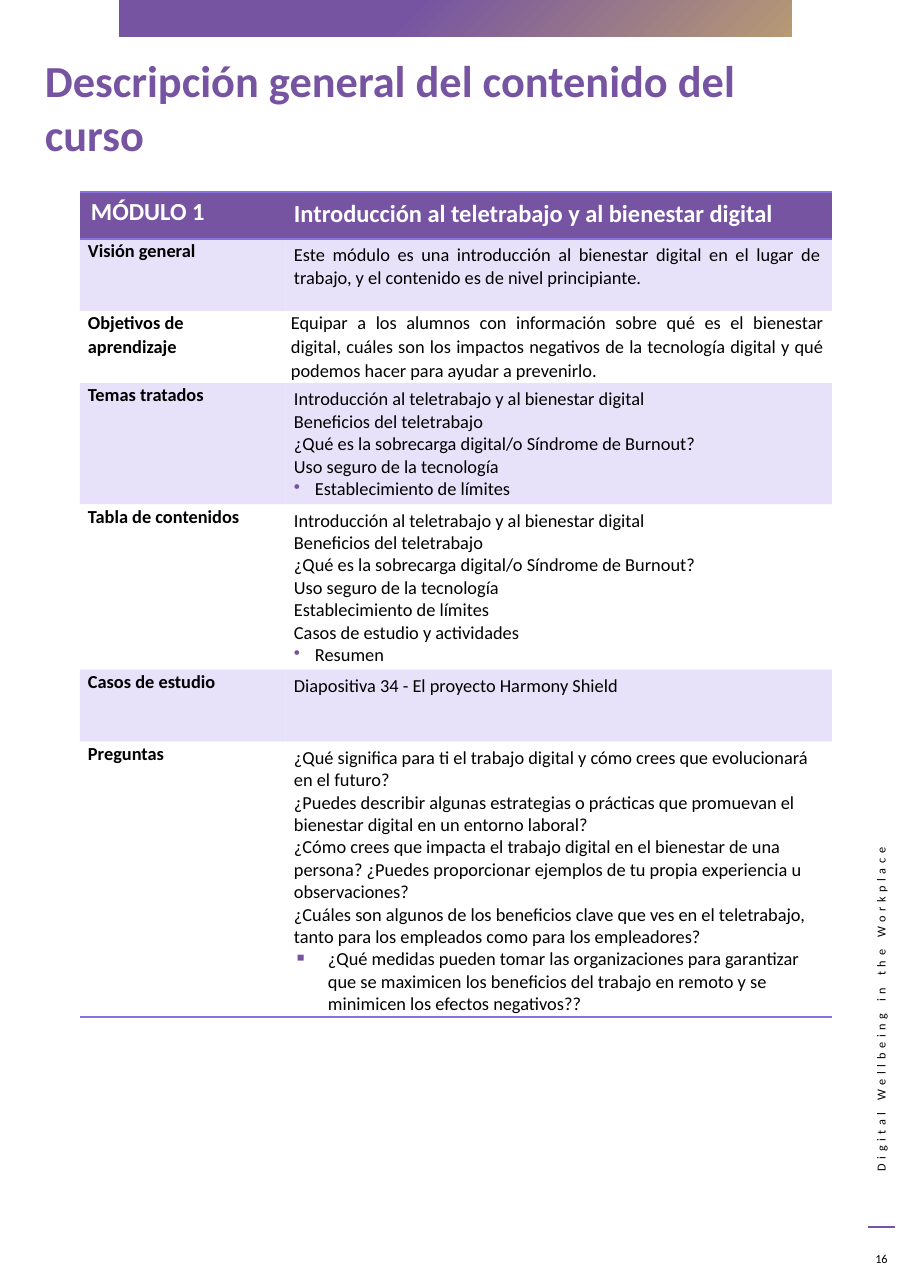
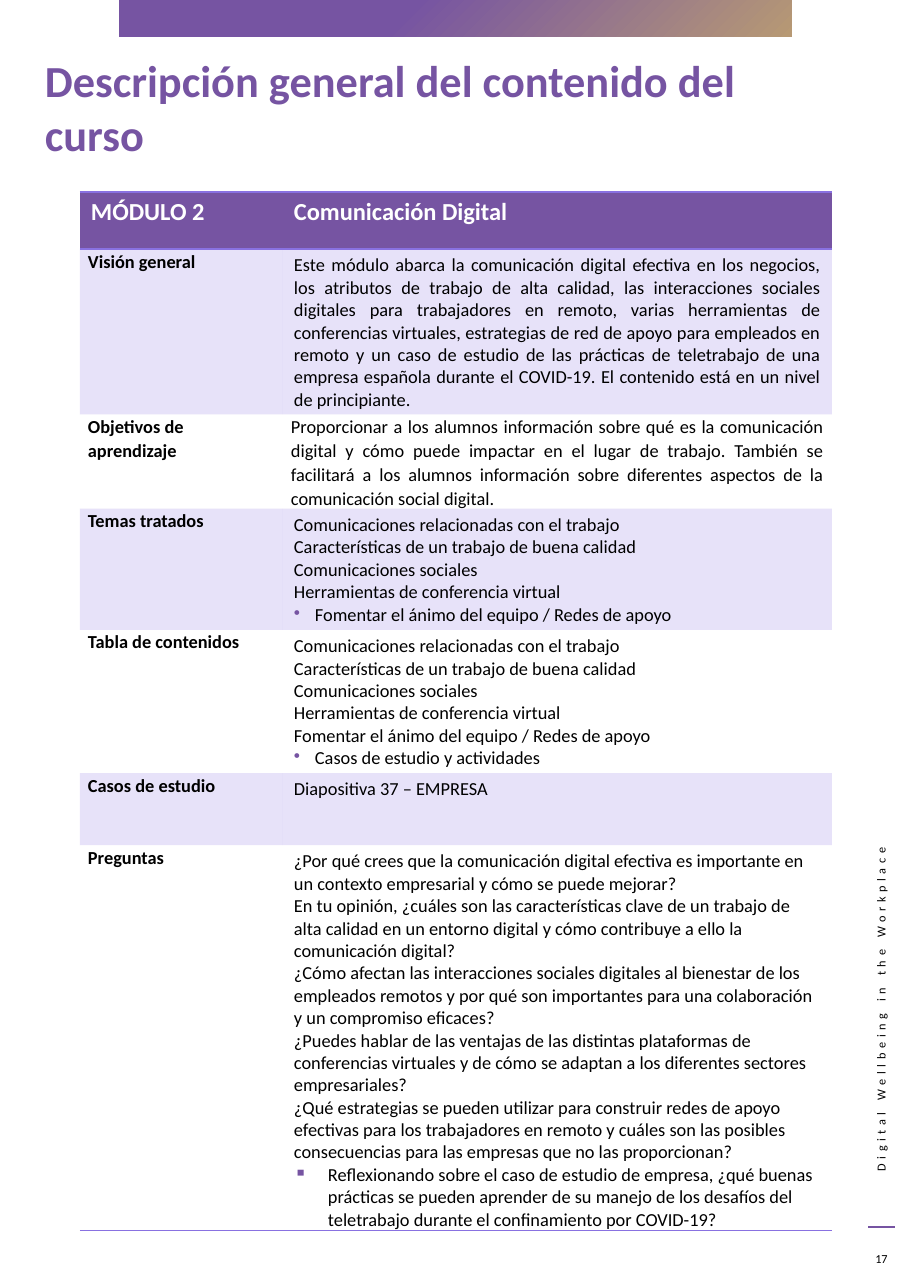
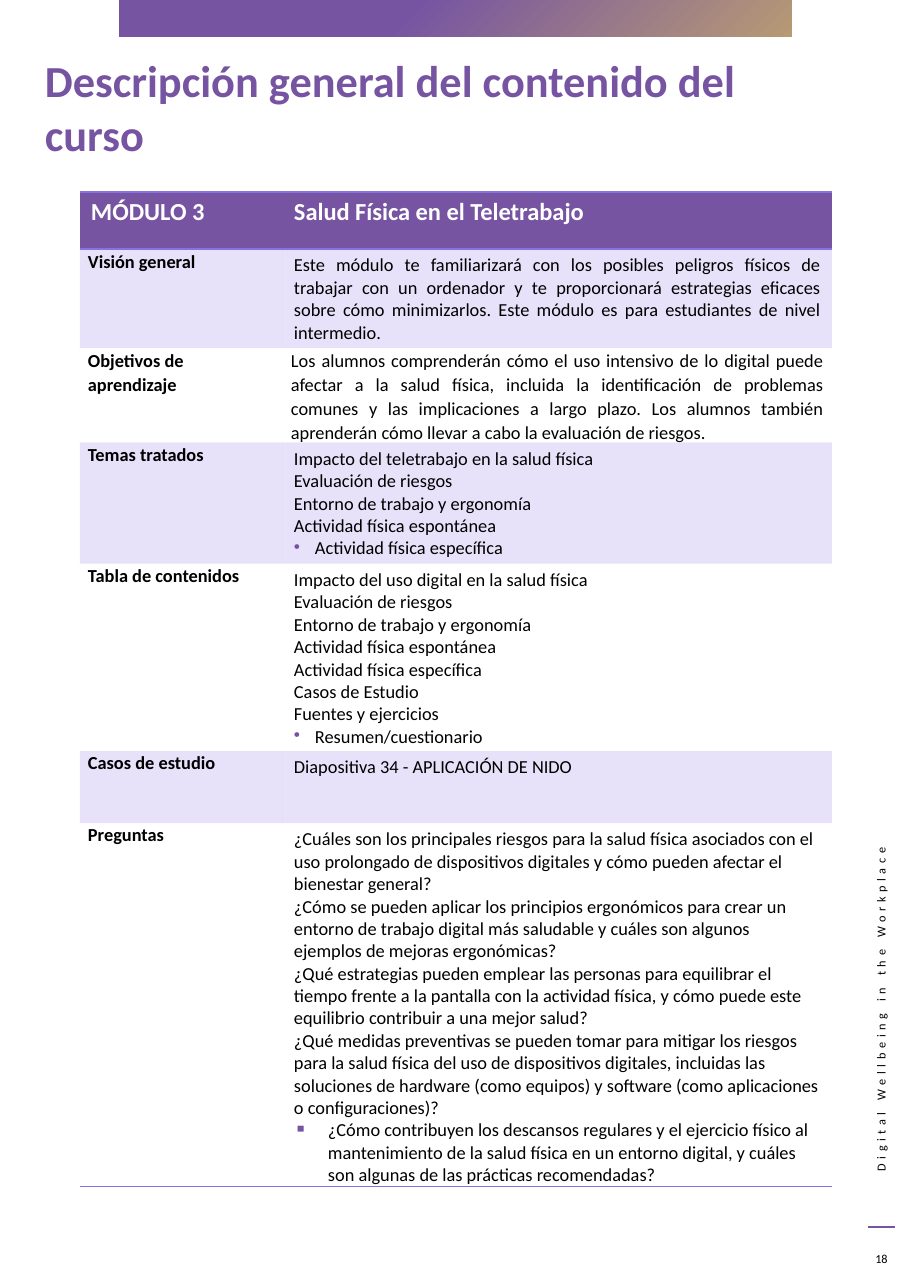
from lxml import etree
from pptx import Presentation
from pptx.dml.color import RGBColor
from pptx.enum.shapes import MSO_CONNECTOR as Link, MSO_SHAPE as Shape
from pptx.enum.text import MSO_ANCHOR as Anchor, PP_ALIGN as Align
from pptx.oxml import parse_xml
from pptx.oxml.ns import qn
from pptx.util import Emu, Pt

SCALE = 8300
WIDE, TALL = 911, 1288
FONT = "Calibri"
PURPLE, GOLD, LILAC = "7654A2", "B79974", "8971E1"
BLACK, WHITE = "000000", "FFFFFF"
NS = "http://schemas.openxmlformats.org/drawingml/2006/main"
NO_STYLE = "{2D5ABB26-0587-4C30-8999-92F81FD0307C}"

TITLE = "Descripción general del contenido del curso"
SIDE = "Digital Wellbeing in the Workplace"
LABELS = [
    "Visión general",
    "Objetivos de aprendizaje",
    "Temas tratados",
    "Tabla de contenidos",
    "Casos de estudio",
    "Preguntas",
]
KINDS = ["block", "aim", "dots", "dots", "plain", "squares"]
MARKS = {"dots": ("•", 21), "squares": ("▪", 34)}
COLS = [203, 549]
TABLE = (80, 192)
ROW = 72

WORK = [
    "Introducción al teletrabajo y al bienestar digital",
    "Beneficios del teletrabajo",
    "¿Qué es la sobrecarga digital/o Síndrome de Burnout?",
    "Uso seguro de la tecnología",
    "Establecimiento de límites",
]
TALK = [
    "Comunicaciones relacionadas con el trabajo",
    "Características de un trabajo de buena calidad",
    "Comunicaciones sociales",
    "Herramientas de conferencia virtual",
    "Fomentar el ánimo del equipo / Redes de apoyo",
]
BODY = [
    "Evaluación de riesgos",
    "Entorno de trabajo y ergonomía",
    "Actividad física espontánea",
    "Actividad física específica",
]

MODULES = [
    {
        "page": 16, "name": "MÓDULO 1", "head": 47, "tall": 845, "lead": 1.07,
        "topic": "Introducción al teletrabajo y al bienestar digital",
        "rows": [
            ["Este módulo es una introducción al bienestar digital en el lugar de trabajo, y el contenido es de nivel principiante."],
            ["Equipar a los alumnos con información sobre qué es el bienestar digital, cuáles son los impactos negativos de la tecnología digital y qué podemos hacer para ayudar a prevenirlo."],
            WORK,
            WORK + ["Casos de estudio y actividades", "Resumen"],
            ["Diapositiva 34 - El proyecto Harmony Shield"],
            [
                "¿Qué significa para ti el trabajo digital y cómo crees que evolucionará en el futuro?",
                "¿Puedes describir algunas estrategias o prácticas que promuevan el bienestar digital en un entorno laboral?",
                "¿Cómo crees que impacta el trabajo digital en el bienestar de una persona? ¿Puedes proporcionar ejemplos de tu propia experiencia u observaciones?",
                "¿Cuáles son algunos de los beneficios clave que ves en el teletrabajo, tanto para los empleados como para los empleadores?",
                "¿Qué medidas pueden tomar las organizaciones para garantizar que se maximicen los beneficios del trabajo en remoto y se minimicen los efectos negativos??",
            ],
        ],
    },
    {
        "page": 17, "name": "MÓDULO 2", "head": 57, "tall": 1059, "lead": None,
        "topic": "Comunicación Digital",
        "rows": [
            ["Este módulo abarca la comunicación digital efectiva en los negocios, los atributos de trabajo de alta calidad, las interacciones sociales digitales para trabajadores en remoto, varias herramientas de conferencias virtuales, estrategias de red de apoyo para empleados en remoto y un caso de estudio de las prácticas de teletrabajo de una empresa española durante el COVID-19. El contenido está en un nivel de principiante."],
            ["Proporcionar a los alumnos información sobre qué es la comunicación digital y cómo puede impactar en el lugar de trabajo. También se facilitará a los alumnos información sobre diferentes aspectos de la comunicación social digital."],
            TALK,
            TALK + ["Casos de estudio y actividades"],
            ["Diapositiva 37 – EMPRESA"],
            [
                "¿Por qué crees que la comunicación digital efectiva es importante en un contexto empresarial y cómo se puede mejorar?",
                "En tu opinión, ¿cuáles son las características clave de un trabajo de alta calidad en un entorno digital y cómo contribuye a ello la comunicación digital?",
                "¿Cómo afectan las interacciones sociales digitales al bienestar de los empleados remotos y por qué son importantes para una colaboración y un compromiso eficaces?",
                "¿Puedes hablar de las ventajas de las distintas plataformas de conferencias virtuales y de cómo se adaptan a los diferentes sectores empresariales?",
                "¿Qué estrategias se pueden utilizar para construir redes de apoyo efectivas para los trabajadores en remoto y cuáles son las posibles consecuencias para las empresas que no las proporcionan?",
                "Reflexionando sobre el caso de estudio de empresa, ¿qué buenas prácticas se pueden aprender de su manejo de los desafíos del teletrabajo durante el confinamiento por COVID-19?",
            ],
        ],
    },
    {
        "page": 18, "name": "MÓDULO 3", "head": 57, "tall": 993, "lead": None,
        "topic": "Salud Física en el Teletrabajo",
        "rows": [
            ["Este módulo te familiarizará con los posibles peligros físicos de trabajar con un ordenador y te proporcionará estrategias eficaces sobre cómo minimizarlos. Este módulo es para estudiantes de nivel intermedio."],
            ["Los alumnos comprenderán cómo el uso intensivo de lo digital puede afectar a la salud física, incluida la identificación de problemas comunes y las implicaciones a largo plazo. Los alumnos también aprenderán cómo llevar a cabo la evaluación de riesgos."],
            ["Impacto del teletrabajo en la salud física"] + BODY,
            ["Impacto del uso digital en la salud física"] + BODY
            + ["Casos de Estudio", "Fuentes y ejercicios", "Resumen/cuestionario"],
            ["Diapositiva 34 - APLICACIÓN DE NIDO"],
            [
                "¿Cuáles son los principales riesgos para la salud física asociados con el uso prolongado de dispositivos digitales y cómo pueden afectar el bienestar general?",
                "¿Cómo se pueden aplicar los principios ergonómicos para crear un entorno de trabajo digital más saludable y cuáles son algunos ejemplos de mejoras ergonómicas?",
                "¿Qué estrategias pueden emplear las personas para equilibrar el tiempo frente a la pantalla con la actividad física, y cómo puede este equilibrio contribuir a una mejor salud?",
                "¿Qué medidas preventivas se pueden tomar para mitigar los riesgos para la salud física del uso de dispositivos digitales, incluidas las soluciones de hardware (como equipos) y software (como aplicaciones o configuraciones)?",
                "¿Cómo contribuyen los descansos regulares y el ejercicio físico al mantenimiento de la salud física en un entorno digital, y cuáles son algunas de las prácticas recomendadas?",
            ],
        ],
    },
]


def px(n):
    return Emu(n * SCALE)


def color(code):
    return RGBColor.from_string(code)


def style(para, size, code=BLACK, bold=False, align=Align.LEFT):
    para.alignment = align
    for run in para.runs:
        font = run.font
        font.name, font.size, font.bold = FONT, Pt(size), bold
        font.color.rgb = color(code)


def add_text(slide, box, text, size, **look):
    shape = slide.shapes.add_textbox(*map(px, box))
    frame = shape.text_frame
    frame.word_wrap = True
    frame.text = text
    style(frame.paragraphs[0], size, **look)
    return shape


def add_band(slide):
    band = slide.shapes.add_shape(Shape.RECTANGLE, *map(px, (119, 0, 673, 37)))
    band.shadow.inherit = False
    band.line.fill.background()
    band.fill.background()
    stops = "".join(
        f'<a:gs pos="{pos}"><a:srgbClr val="{code}"/></a:gs>'
        for pos, code in [(0, GOLD), (58000, PURPLE)]
    )
    blend = parse_xml(
        f'<a:gradFill xmlns:a="{NS}"><a:gsLst>{stops}</a:gsLst>'
        '<a:path path="circle"><a:fillToRect l="100000" t="100000"/></a:path>'
        "</a:gradFill>"
    )
    props = band._element.spPr
    props.replace(props.find(qn("a:noFill")), blend)


def add_frame(slide, page):
    side = add_text(slide, (690, 1015, 382, 26), SIDE, 8, align=Align.RIGHT)
    side.rotation = 270
    side.text_frame.paragraphs[0].runs[0].font._element.set("spc", "300")
    rule = slide.shapes.add_connector(Link.STRAIGHT, *map(px, (895, 1227, 868, 1227)))
    rule.line.color.rgb = color(PURPLE)
    rule.line.width = Pt(0.75)
    etree.SubElement(rule._element.spPr, qn("a:effectLst"))
    add_band(slide)
    add_text(slide, (34, 48, 784, 89), TITLE, 29, code=PURPLE, bold=True)
    num = add_text(slide, (860, 1243, 43, 32), str(page), 8, align=Align.CENTER)
    num.text_frame.vertical_anchor = Anchor.MIDDLE


def add_edges(cell, sides):
    props = cell._tc.get_or_add_tcPr()
    for spot, side in enumerate(sides):
        props.insert(spot, parse_xml(
            f'<a:ln{side} xmlns:a="{NS}" w="12700"><a:solidFill>'
            f'<a:srgbClr val="{LILAC}"/></a:solidFill></a:ln{side}>'
        ))


def paint(cell, code, alpha=None):
    cell.fill.solid()
    cell.fill.fore_color.rgb = color(code)
    if alpha:
        tint = cell._tc.tcPr.find(".//" + qn("a:srgbClr"))
        etree.SubElement(tint, qn("a:alpha"), val=str(alpha * 1000))


def add_mark(para, mark, step):
    props = para._p.get_or_add_pPr()
    props.set("marL", str(px(step)))
    props.set("indent", str(-px(step)))
    tint = etree.SubElement(props, qn("a:buClr"))
    etree.SubElement(tint, qn("a:srgbClr"), val=PURPLE)
    etree.SubElement(props, qn("a:buChar"), char=mark)


def tighten(cell):
    cell.margin_left = cell.margin_right = px(8)
    cell.margin_top = cell.margin_bottom = 0
    para = cell.text_frame.paragraphs[0]
    para.line_spacing = 1.07
    para.space_after = Pt(8)


def fill_body(cell, lines, kind):
    cell.text_frame.text = "\n".join(lines)
    paras = cell.text_frame.paragraphs
    align = Align.JUSTIFY if kind in ("block", "aim") else Align.LEFT
    if kind == "aim":
        tighten(cell)
    if kind in MARKS:
        add_mark(paras[-1], *MARKS[kind])
    for para in paras:
        style(para, 12, align=align)


def add_module(slide, mod):
    count = len(LABELS) + 1
    size = (sum(COLS), mod["head"] + ROW * len(LABELS))
    frame = slide.shapes.add_table(count, len(COLS), *map(px, TABLE + size))
    table = frame.table
    table.horz_banding = table.first_row = False
    table._tbl.tblPr.find(qn("a:tableStyleId")).text = NO_STYLE
    for col, width in zip(table.columns, COLS):
        col.width = px(width)
    for i, row in enumerate(table.rows):
        row.height = px(ROW if i else mod["head"])
    frame.height = px(mod["tall"])

    for cell, text in zip(table.rows[0].cells, (mod["name"], mod["topic"])):
        cell.text_frame.text = text
        style(cell.text_frame.paragraphs[0], 16, WHITE, True)
        paint(cell, PURPLE)
        add_edges(cell, "TB")
    if mod["lead"]:
        table.cell(0, 1).text_frame.paragraphs[0].line_spacing = mod["lead"]

    for i, (label, lines, kind) in enumerate(zip(LABELS, mod["rows"], KINDS), 1):
        left, right = table.rows[i].cells
        left.text_frame.text = label
        tighten(left)
        style(left.text_frame.paragraphs[0], 12, bold=True)
        fill_body(right, lines, kind)
        for cell in (left, right):
            if i % 2:
                paint(cell, LILAC, 20)
            else:
                cell.fill.background()
            if i == len(LABELS):
                add_edges(cell, "B")


def main():
    deck = Presentation()
    deck.slide_width, deck.slide_height = px(WIDE), px(TALL)
    for mod in MODULES:
        slide = deck.slides.add_slide(deck.slide_layouts[6])
        add_frame(slide, mod["page"])
        add_module(slide, mod)
    deck.save("out.pptx")


if __name__ == "__main__":
    main()
